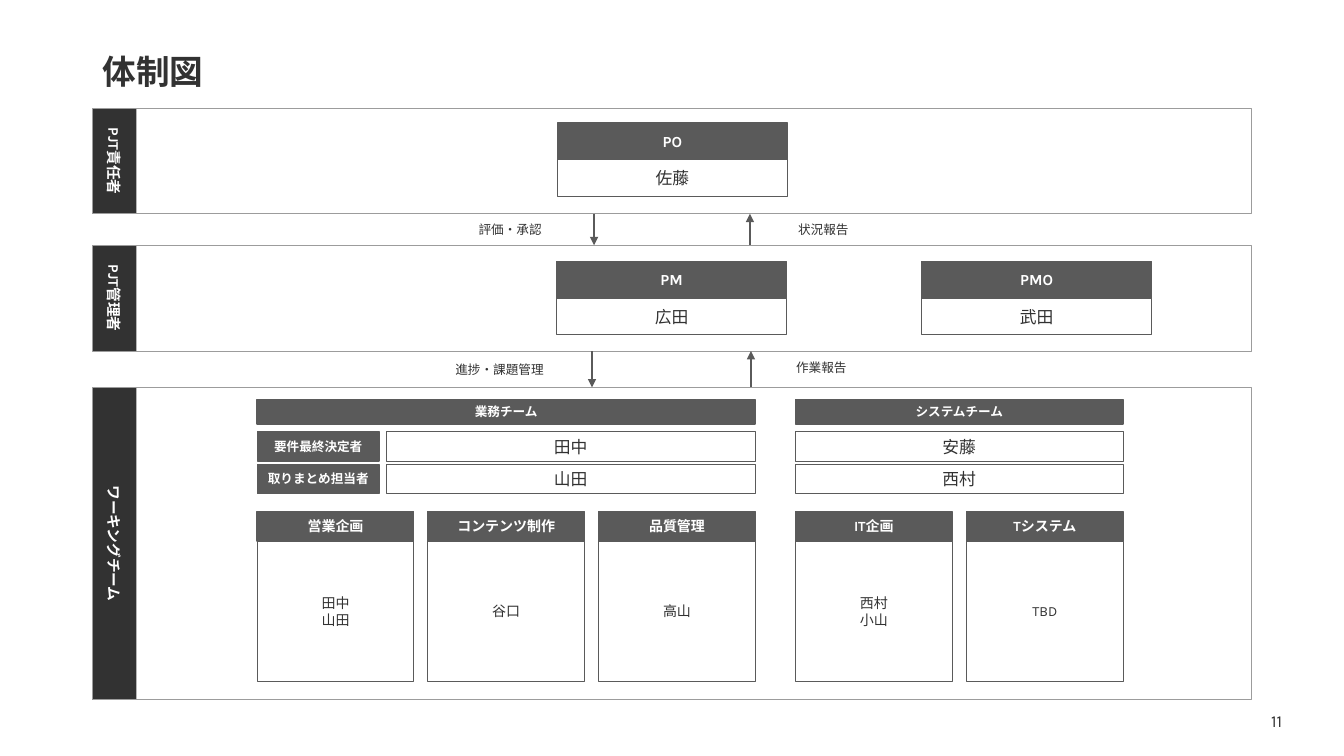
import pptx
import pptx.dml.color
import pptx.enum.shapes
import pptx.enum.text
import pptx.oxml.ns
import pptx.util
from lxml import etree

Pt = pptx.util.Pt
RGB = pptx.dml.color.RGBColor
ALIGN = pptx.enum.text.PP_ALIGN
ANCHOR = pptx.enum.text.MSO_ANCHOR
RECT = pptx.enum.shapes.MSO_SHAPE.RECTANGLE
STRAIGHT = pptx.enum.shapes.MSO_CONNECTOR.STRAIGHT
qn = pptx.oxml.ns.qn

DARK = RGB(0x32, 0x32, 0x32)
GRAY = RGB(0x5A, 0x5A, 0x5A)
BORDER = RGB(0x9C, 0x9C, 0x9C)
WHITE = RGB(0xFF, 0xFF, 0xFF)
FONT = "Karla"

prs = pptx.Presentation()
prs.slide_width, prs.slide_height = Pt(960), Pt(540)
s = prs.slides.add_slide(prs.slide_layouts[5])


def write(tf, lines, size, color=DARK, bold=False, align=ALIGN.CENTER, anchor=ANCHOR.MIDDLE):
    """Fill a text frame with one paragraph per line."""
    tf.word_wrap = True
    tf.vertical_anchor = anchor
    for i, line in enumerate(lines):
        p = tf.paragraphs[0] if i == 0 else tf.add_paragraph()
        p.alignment = align
        r = p.add_run()
        r.text = line
        r.font.name, r.font.size, r.font.bold = FONT, Pt(size), bold
        r.font.color.rgb = color


def add_box(x, y, w, h, lines=(), size=12, fill=None, line=GRAY, weight=0.5):
    """Add a rectangle: filled ones get bold white text, open ones dark text."""
    sp = s.shapes.add_shape(RECT, Pt(x), Pt(y), Pt(w), Pt(h))
    sp.shadow.inherit = False
    if fill is None:
        sp.fill.background()
    else:
        sp.fill.solid()
        sp.fill.fore_color.rgb = fill
    if line is None:
        sp.line.fill.background()
    else:
        sp.line.color.rgb = line
        sp.line.width = Pt(weight)
    tf = sp.text_frame
    tf.margin_left = tf.margin_right = tf.margin_top = tf.margin_bottom = 0
    write(tf, lines, size, DARK if fill is None else WHITE, fill is not None)
    return sp


# Title and page number
title = s.shapes.title
title.left, title.top, title.width, title.height = Pt(66.2), Pt(28.8), Pt(828), Pt(48.2)
write(title.text_frame, ["体制図"], 24, bold=True, align=ALIGN.LEFT)
title.text_frame.paragraphs[0].line_spacing = 0.9
number = s.shapes.add_textbox(Pt(894.2), Pt(500.4), Pt(35.3), Pt(28.8))
write(number.text_frame, ["11"], 12)

# Bands, each with a vertical label
for label, y, h in [("PJT責任者", 77.3, 75.4), ("PJT管理者", 175.2, 75.6), ("ワーキングチーム", 276.7, 223.2)]:
    bar = add_box(65.8, y, 31.7, h, [label], 10.5, DARK, None)
    bar.text_frame._txBody.bodyPr.set("vert", "vert")
    add_box(66, y, 828, h, line=BORDER)

# Cards: a role or team above its members
ROLE = (164.2, 26.2, 26.2, 11, 12)
TEAM = (111.9, 21.1, 100.1, 10, 10)
cards = [
    ("PO", ["佐藤"], 398.2, 87.8, ROLE),
    ("PM", ["広田"], 397.6, 186.8, ROLE),
    ("PMO", ["武田"], 658.4, 186.8, ROLE),
    ("営業企画", ["田中", "山田"], 183.7, 365.3, TEAM),
    ("コンテンツ制作", ["谷口"], 305.6, 365.3, TEAM),
    ("品質管理", ["高山"], 427.6, 365.3, TEAM),
    ("IT企画", ["西村", "小山"], 568.2, 365.3, TEAM),
    ("Tシステム", ["TBD"], 690.4, 365.3, TEAM),
]
for head, members, x, y, (w, head_h, body_h, head_size, body_size) in cards:
    add_box(x, y, w, head_h, [head], head_size, GRAY, weight=1)
    add_box(x, y + head_h, w, body_h, members, body_size)

# Team headings and their leads
for text, x, w in [("業務チーム", 183.7, 355.7), ("システムチーム", 568.2, 234)]:
    add_box(x, 285.3, w, 17.7, [text], 9, GRAY, weight=1)
leads = [("要件最終決定者", "田中", "安藤"), ("取りまとめ担当者", "山田", "西村")]
for i, (role, business, system) in enumerate(leads):
    y = 308.3 + 23.3 * i
    add_box(183.7, y, 87.1, 21, [role], 9, GRAY, weight=1)
    add_box(275.8, y, 263.6, 21, [business])
    add_box(568.2, y, 234, 21, [system])

# Arrows between the bands
for x, y1, y2 in [(424.4, 152.7, 175.2), (535.7, 175.2, 152.7), (422.9, 250.8, 276.7), (536.4, 276.7, 250.8)]:
    arrow = s.shapes.add_connector(STRAIGHT, Pt(x), Pt(y1), Pt(x), Pt(y2))
    arrow.line.color.rgb = GRAY
    arrow.line.width = Pt(1.5)
    etree.SubElement(arrow.line._get_or_add_ln(), qn("a:tailEnd"), type="triangle")
    etree.SubElement(arrow._element.spPr, qn("a:effectLst"))

for text, x, y, w in [
    ("評価・承認", 334.8, 154.8, 64.1),
    ("状況報告", 563, 154.8, 64.1),
    ("進捗・課題管理", 318.2, 255.2, 80.6),
    ("作業報告", 561.6, 253.6, 64.1),
]:
    note = s.shapes.add_textbox(Pt(x), Pt(y), Pt(w), Pt(18))
    write(note.text_frame, [text], 9, align=ALIGN.LEFT, anchor=ANCHOR.TOP)
    note.text_frame.auto_size = pptx.enum.text.MSO_AUTO_SIZE.SHAPE_TO_FIT_TEXT

prs.save("out.pptx")
